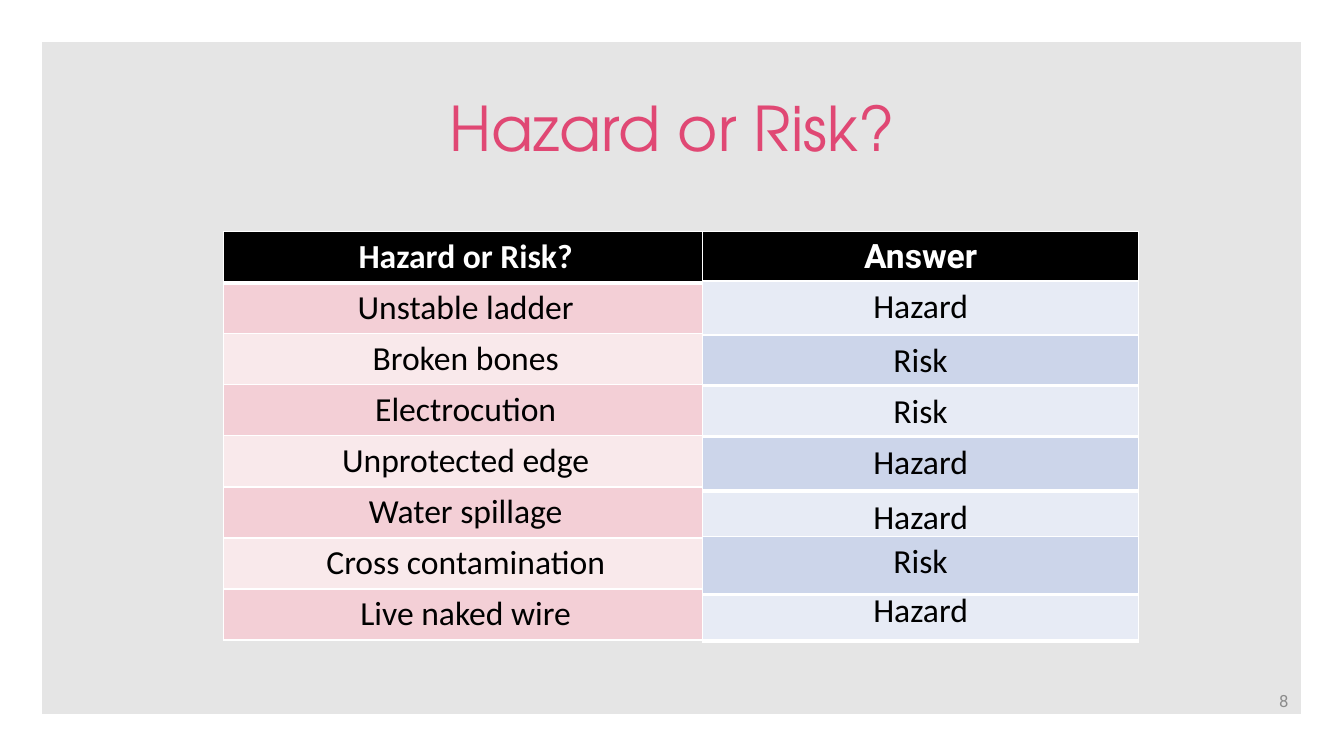
from dataclasses import dataclass
from typing import Any

from lxml.etree import SubElement
from pptx import Presentation
from pptx.dml.color import RGBColor
from pptx.enum.shapes import MSO_SHAPE
from pptx.enum.text import MSO_ANCHOR, MSO_AUTO_SIZE, PP_ALIGN
from pptx.oxml import parse_xml
from pptx.oxml.ns import nsdecls, qn
from pptx.util import Cm, Pt

BLACK = RGBColor(0x00, 0x00, 0x00)
WHITE = RGBColor(0xFF, 0xFF, 0xFF)
GRAY = RGBColor(0x8C, 0x8C, 0x8C)
PINK = RGBColor(0xE0, 0x48, 0x74)
ROSE = RGBColor(0xF3, 0xCF, 0xD6)
BLUSH = RGBColor(0xF9, 0xE9, 0xEB)
ICE = RGBColor(0xE7, 0xEB, 0xF5)
BLUE = RGBColor(0xCC, 0xD5, 0xEA)


@dataclass(frozen=True)
class Style:
    name: str
    size: int
    color: RGBColor
    bold: bool = False
    align: PP_ALIGN = PP_ALIGN.CENTER


@dataclass(frozen=True)
class Entry:
    text: str
    fill: RGBColor
    style: Style


@dataclass(frozen=True)
class Answer:
    entry: Entry
    top: float
    height: float


BODY = Style("Calibri", 24, BLACK)
HEAD = Style("Calibri", 24, WHITE, True)
ANSWER_HEAD = Style("Roboto", 24, WHITE, True)
TITLE = Style("TeX Gyre Adventor", 44, PINK)
NUMBER = Style("Roboto", 12, GRAY, align=PP_ALIGN.RIGHT)

CASES = ["Unstable ladder", "Broken bones", "Electrocution", "Unprotected edge",
         "Water spillage", "Cross contamination", "Live naked wire"]
HAZARD, RISK = "Hazard", "Risk"
# Later answers overlap earlier ones, so the order is the stacking order.
ANSWERS = [
    Answer(Entry("Answer", BLACK, ANSWER_HEAD), 5.84, 1.25),
    Answer(Entry(HAZARD, ICE, BODY), 7.09, 1.37),
    Answer(Entry(RISK, BLUE, BODY), 8.46, 1.27),
    Answer(Entry(HAZARD, ICE, BODY), 12.4, 1.4),
    Answer(Entry(HAZARD, ICE, BODY), 14.76, 1.4),
    Answer(Entry(HAZARD, BLUE, BODY), 11.02, 1.35),
    Answer(Entry(RISK, ICE, BODY), 9.73, 1.27),
    Answer(Entry(RISK, BLUE, BODY), 13.51, 1.47),
]


def dress(item: Any, values: dict[str, Any]) -> None:
    for key, value in values.items():
        setattr(item, key, value)


def place(shape: Any, left: float, top: float, width: float, height: float) -> None:
    dress(shape, {"left": Cm(left), "top": Cm(top),
                  "width": Cm(width), "height": Cm(height)})


def write(frame: Any, text: str, style: Style) -> None:
    line = frame.paragraphs[0]
    line.alignment = style.align
    run = line.add_run()
    run.text = text
    dress(run.font, {"name": style.name, "size": Pt(style.size), "bold": style.bold})
    run.font.color.rgb = style.color


def edge(cell: Any, top: int, bottom: int) -> None:
    """Give a cell white borders; widths are in points."""
    props = cell._tc.get_or_add_tcPr()
    sides = {"L": 1, "R": 1, "T": top, "B": bottom}
    for spot, (side, width) in enumerate(sides.items()):
        props.insert(spot, parse_xml(
            f'<a:ln{side} {nsdecls("a")} w="{Pt(width)}"><a:solidFill>'
            f'<a:srgbClr val="{WHITE}"/></a:solidFill></a:ln{side}>'))


def draw_table(slide: Any, rows: list[Entry], left: float, top: float,
               width: float, height: float) -> None:
    table = slide.shapes.add_table(
        len(rows), 1, Cm(left), Cm(top), Cm(width), Cm(height)).table
    dress(table, {"first_row": False, "horz_banding": False})
    for index, entry in enumerate(rows):
        cell = table.cell(index, 0)
        cell.fill.solid()
        cell.fill.fore_color.rgb = entry.fill
        edge(cell, 3 if index == 1 else 1, 3 if index == 0 else 1)
        write(cell.text_frame, entry.text, entry.style)


def draw_title(slide: Any) -> None:
    title = slide.shapes.title
    place(title, 2.34, 1.47, 29.21, 3.68)
    dress(title.text_frame, {"word_wrap": True, "auto_size": MSO_AUTO_SIZE.NONE,
                             "vertical_anchor": MSO_ANCHOR.MIDDLE})
    write(title.text_frame, "Hazard or Risk?", TITLE)
    title.text_frame.paragraphs[0].line_spacing = 0.9


def draw_panel(slide: Any) -> None:
    """Lay a sheer gray panel behind the title."""
    panel = slide.shapes.add_shape(
        MSO_SHAPE.RECTANGLE, Cm(0.89), Cm(0.89), Cm(32.08), Cm(17.27))
    panel.shadow.inherit = False
    panel.fill.solid()
    panel.fill.fore_color.rgb = BLACK
    shade = panel.element.spPr.find(qn("a:solidFill"))[0]
    SubElement(shade, qn("a:alpha")).set("val", "10000")
    panel.line.color.rgb = WHITE
    panel.line.width = Pt(10)
    slide.shapes.title.element.addprevious(panel.element)


def draw_number(slide: Any) -> None:
    box = slide.shapes.add_textbox(Cm(25.1), Cm(17.15), Cm(7.62), Cm(1.02))
    dress(box.text_frame, {"word_wrap": True, "vertical_anchor": MSO_ANCHOR.MIDDLE})
    write(box.text_frame, "8", NUMBER)


def main() -> None:
    deck = Presentation()
    dress(deck, {"slide_width": Cm(33.87), "slide_height": Cm(19.05)})
    slide = deck.slides.add_slide(deck.slide_layouts[5])
    draw_title(slide)
    draw_panel(slide)
    draw_number(slide)
    cases = [Entry("Hazard or Risk?", BLACK, HEAD)]
    cases += [Entry(text, BLUSH if index % 2 else ROSE, BODY)
              for index, text in enumerate(CASES)]
    draw_table(slide, cases, 5.64, 5.84, 12.19, 10.29)
    for answer in ANSWERS:
        draw_table(slide, [answer.entry], 17.7, answer.top, 11, answer.height)
    deck.save("out.pptx")


if __name__ == "__main__":
    main()
